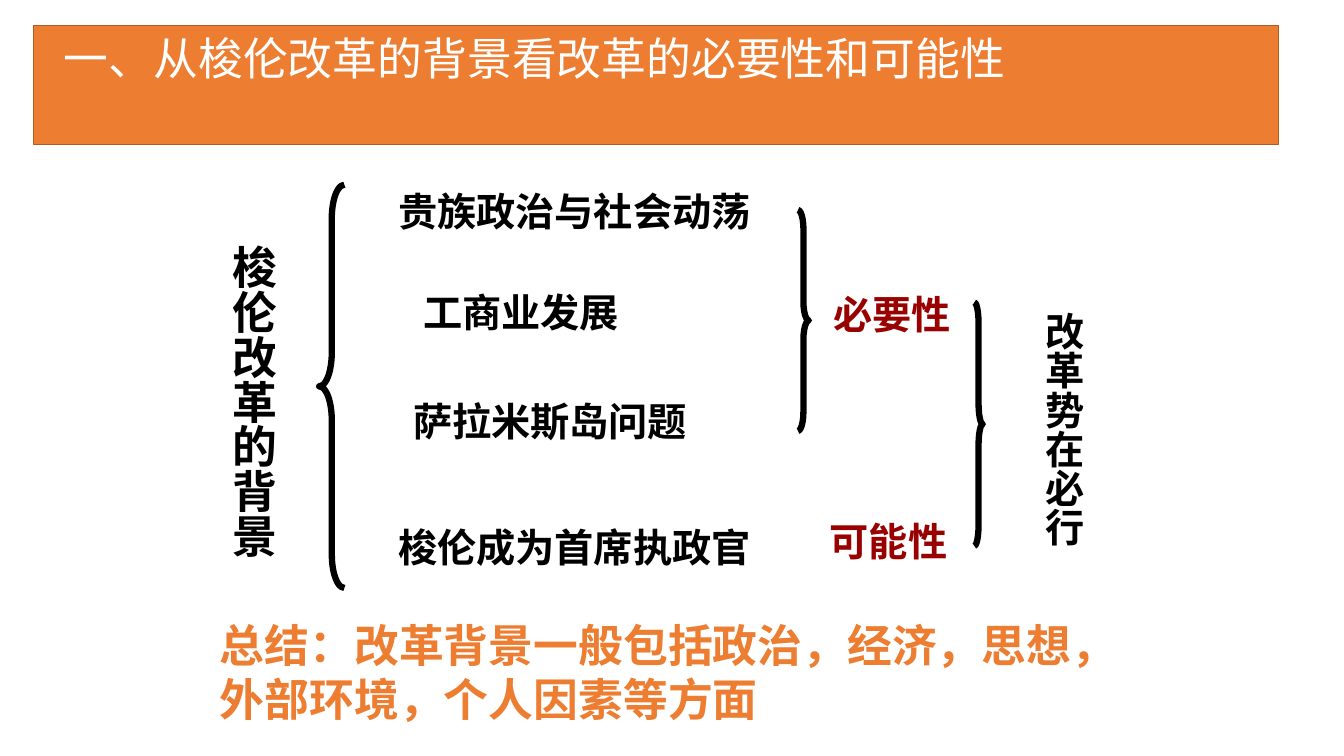
from pptx import Presentation
from pptx import util as u
from pptx.dml.color import RGBColor
from pptx.enum import shapes, text

BLACK = RGBColor(0x00, 0x00, 0x00)
WHITE = RGBColor(0xFF, 0xFF, 0xFF)
ORANGE = RGBColor(0xED, 0x7D, 0x31)
BROWN = RGBColor(0xAF, 0x5C, 0x24)
RED = RGBColor(0x99, 0x00, 0x00)
SANS = "Noto Sans CJK SC"
COLS, ROWS = 160, 90
CELL = u.Inches(7.5) // ROWS


def place(box):
    """Turn grid columns and rows into slide lengths."""
    return [round(n * CELL) for n in box]


def write(sp, words, size=28, color=BLACK, bold=True, font=SANS,
          left=0.1, top=0.05, wrap=True, vertical=False):
    tf = sp.text_frame
    tf.word_wrap = wrap
    tf.auto_size = text.MSO_AUTO_SIZE.NONE
    tf.vertical_anchor = text.MSO_ANCHOR.TOP
    tf.margin_left, tf.margin_top = u.Inches(left), u.Inches(top)
    tf.margin_right, tf.margin_bottom = u.Inches(0.1), u.Inches(0.05)
    if vertical:
        tf._txBody.bodyPr.set("vert", "eaVert")
    p = tf.paragraphs[0]
    p.alignment = text.PP_ALIGN.LEFT
    r = p.add_run()
    r.text = words
    r.font.size, r.font.bold, r.font.name = u.Pt(size), bold, font
    r.font.color.rgb = color


def add_text(slide, box, words, **style):
    write(slide.shapes.add_textbox(*place(box)), words, **style)


def add_brace(slide, box, kind, curve):
    sp = slide.shapes.add_shape(kind, *place(box))
    sp.shadow.inherit = False
    sp.adjustments[0] = curve
    sp.fill.background()
    sp.line.color.rgb, sp.line.width = BLACK, u.Pt(4.5)


def banner(slide, box, words):
    sp = slide.shapes.title
    sp.left, sp.top, sp.width, sp.height = place(box)
    sp.fill.solid()
    sp.fill.fore_color.rgb = ORANGE
    sp.line.color.rgb, sp.line.width = BROWN, u.Pt(1)
    write(sp, words, size=32, color=WHITE, bold=False, left=0.3)


def background_diagram(slide, box):
    x, y, w, h = box
    left, right = shapes.MSO_SHAPE.LEFT_BRACE, shapes.MSO_SHAPE.RIGHT_BRACE

    add_text(slide, (x, y + 7, 9, 39), "梭伦改革的背景", size=32,
             font="Arial", wrap=False, vertical=True)
    add_brace(slide, (x + 13, y + 1, 3, 48), left, 1.33)

    causes = [(20, 0, 0.2, "贵族政治与社会动荡"), (23, 12, 0.2, "工商业发展"),
              (23, 25, 0.1, "萨拉米斯岛问题"), (20, 40, 0.2, "梭伦成为首席执政官")]
    for col, row, inset, words in causes:
        add_text(slide, (x + col, y + row, 50, 8.6), words,
                 left=inset, top=0.11)

    add_brace(slide, (x + 70, y + 4, 1.3, 26.3), right, 1.75)
    for col, row, words in [(73, 13, "必要性"), (72.6, 40, "可能性")]:
        add_text(slide, (x + col, y + row, 20, 6.8), words,
                 color=RED, font="Arial")

    add_brace(slide, (x + 91, y + 15, 1, 29), right, 2.46)
    add_text(slide, (x + w - 8, y + 15, 8, h - 20), "改革势在必行",
             wrap=False, vertical=True)


def summary(slide, box, words):
    add_text(slide, box, words, size=32, color=ORANGE)


def main():
    prs = Presentation()
    prs.slide_width, prs.slide_height = COLS * CELL, ROWS * CELL
    s = prs.slides.add_slide(prs.slide_layouts[5])
    banner(s, (4, 3, 148.2, 14.2), "一、从梭伦改革的背景看改革的必要性和可能性")
    background_diagram(s, (25, 21, 105, 49))
    summary(s, (25, 73, 112, 14.2),
            "总结：改革背景一般包括政治，经济，思想，外部环境，个人因素等方面")
    prs.save("out.pptx")


if __name__ == "__main__":
    main()
